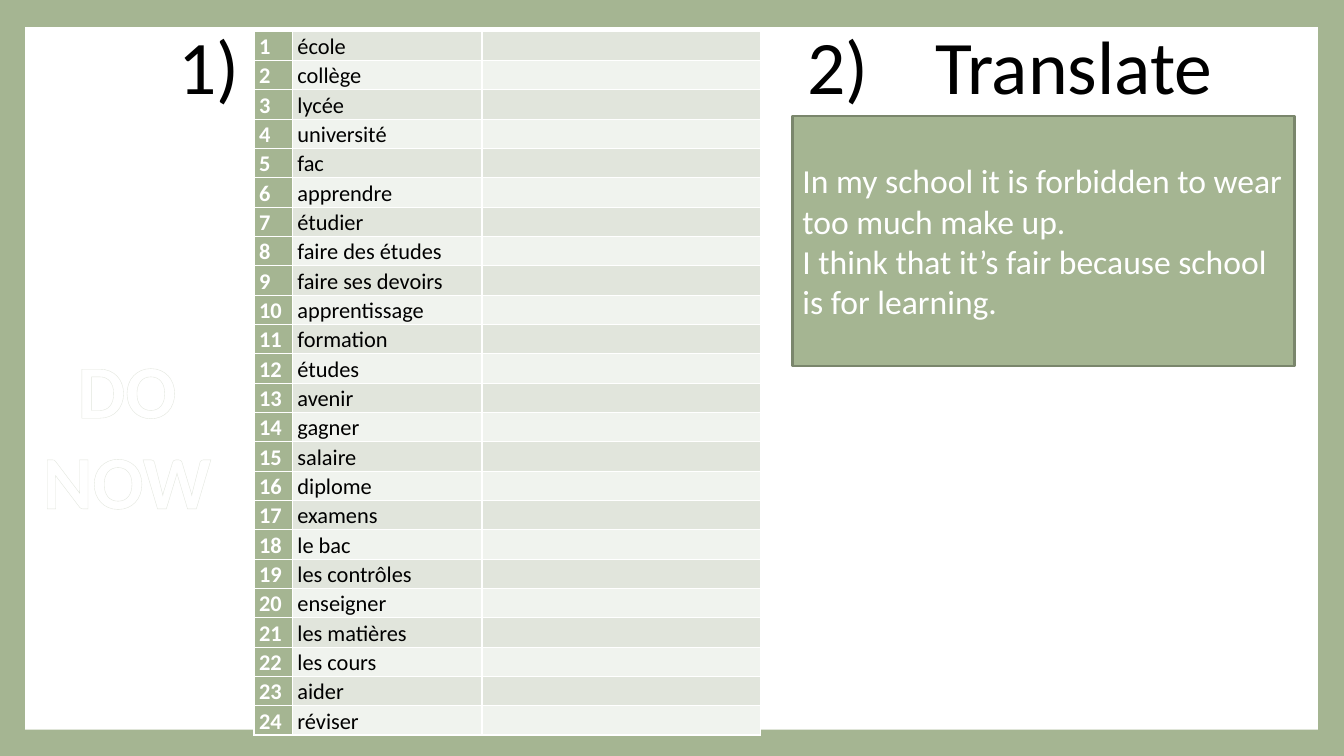
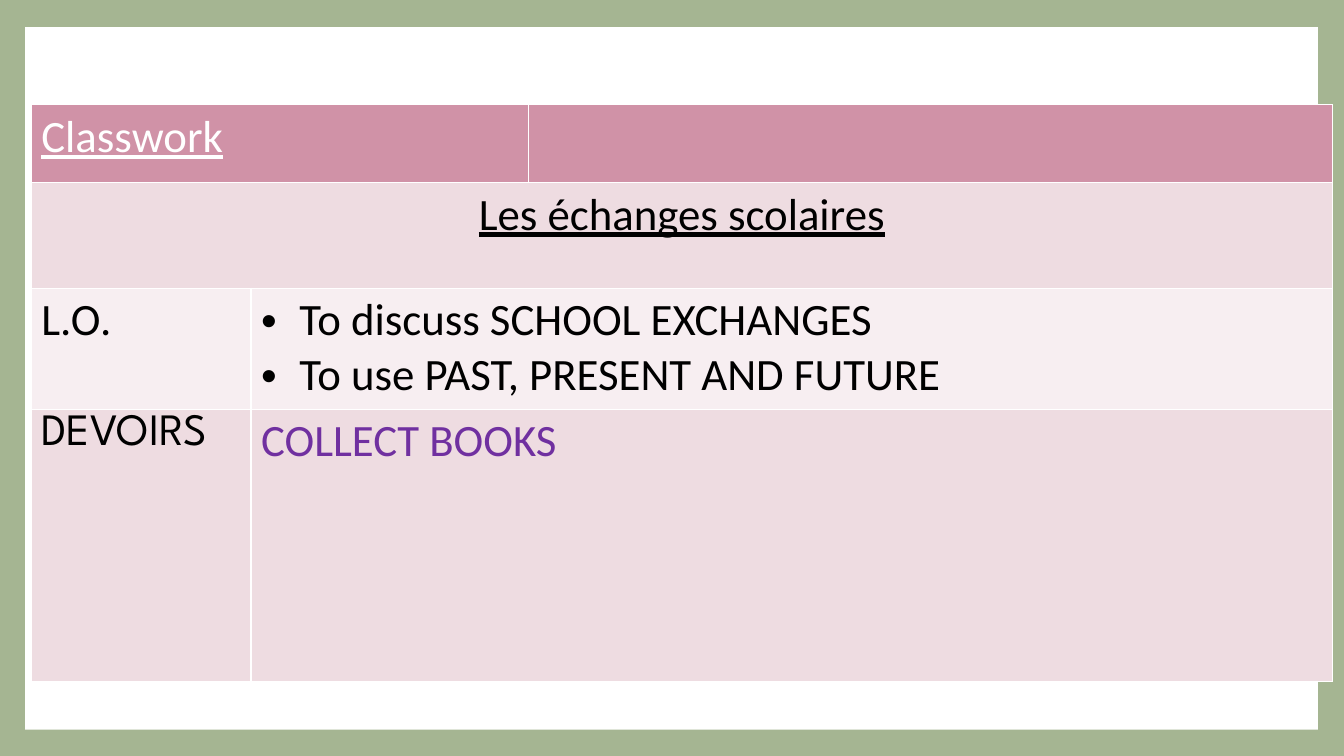
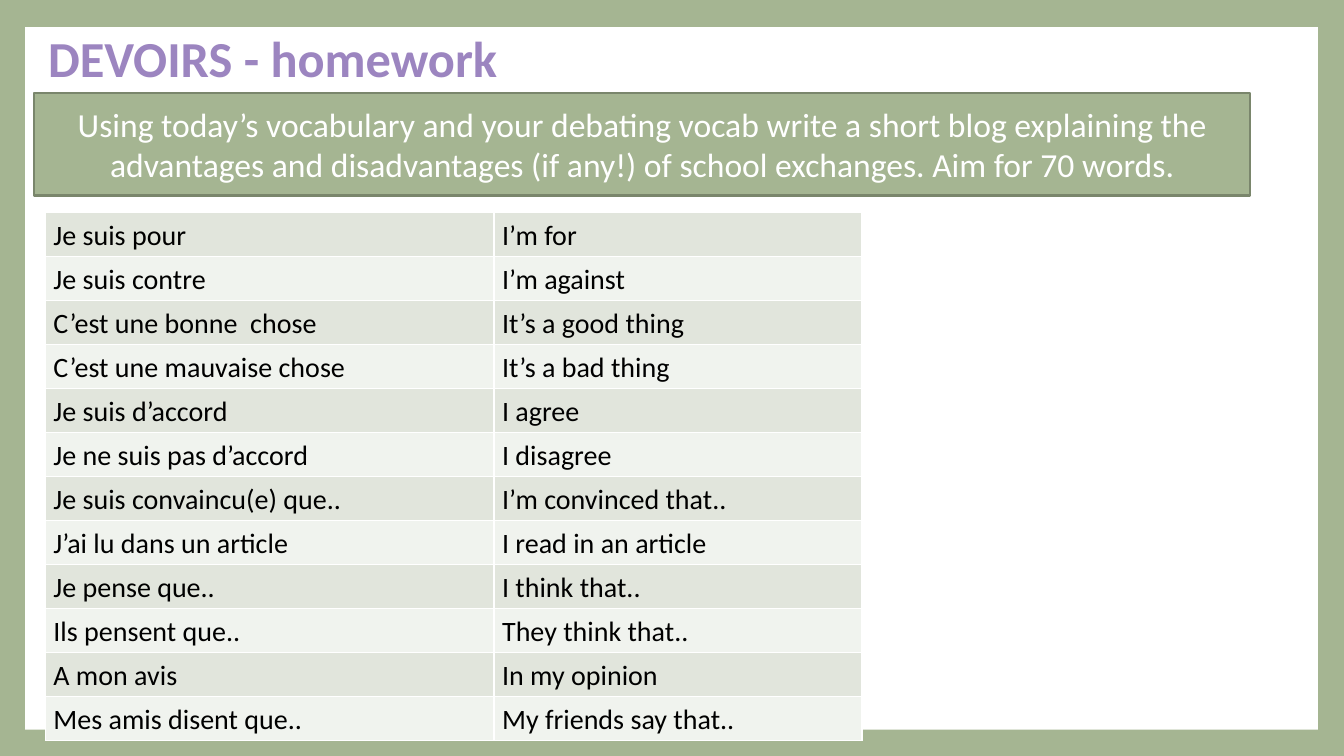
from lxml import etree
from pptx import Presentation
from pptx.dml.color import RGBColor
from pptx.enum.shapes import MSO_SHAPE
from pptx.enum.text import MSO_ANCHOR, MSO_AUTO_SIZE, PP_ALIGN
from pptx.oxml.ns import qn
from pptx.util import Inches, Pt

RECT = MSO_SHAPE.RECTANGLE
MIDDLE = MSO_ANCHOR.MIDDLE
GROW = MSO_AUTO_SIZE.SHAPE_TO_FIT_TEXT
LEFT, CENTER = PP_ALIGN.LEFT, PP_ALIGN.CENTER

HUES = {
    "sage": "A5B592", "moss": "7A866C", "mist": "E1E5DC", "pale": "F0F3EE",
    "rose": "D092A7", "blush": "EEDCE1", "petal": "F7EEF1",
    "violet": "7030A0", "lilac": "9C85C0", "white": "FFFFFF", "black": "000000",
}
BANDS = ("mist", "pale")

# Text formats
BASE = {"name": "Calibri", "size": Pt(16), "bold": False}
HEAD = BASE | {"size": Pt(54)}
BOLD = BASE | {"bold": True}
BODY = BASE | {"size": Pt(24)}
LARGE = BASE | {"size": Pt(32)}
LINED = LARGE | {"underline": True}
PHRASE = BASE | {"size": Pt(20)}

WORDS = [
    "école", "collège", "lycée", "université", "fac", "apprendre", "étudier",
    "faire des études", "faire ses devoirs", "apprentissage", "formation",
    "études", "avenir", "gagner", "salaire", "diplome", "examens", "le bac",
    "les contrôles", "enseigner", "les matières", "les cours", "aider", "réviser",
]
PAIRS = [
    ("Je suis pour", "I’m for"),
    ("Je suis contre", "I’m against"),
    ("C’est une bonne  chose", "It’s a good thing"),
    ("C’est une mauvaise chose", "It’s a bad thing"),
    ("Je suis d’accord", "I agree"),
    ("Je ne suis pas d’accord", "I disagree"),
    ("Je suis convaincu(e) que..", "I’m convinced that.."),
    ("J’ai lu dans un article", "I read in an article"),
    ("Je pense que..", "I think that.."),
    ("Ils pensent que..", "They think that.."),
    ("A mon avis", "In my opinion"),
    ("Mes amis disent que..", "My friends say that.."),
]


def hue(name):
    return RGBColor.from_string(HUES[name])


def inches(box):
    return [Inches(v) for v in box]


def apply(item, values):
    for key, value in values.items():
        setattr(item, key, value)


def solid(parent, name):
    fill = etree.SubElement(parent, qn("a:solidFill"))
    etree.SubElement(fill, qn("a:srgbClr"), val=HUES[name])


def write(frame, lines, font, color, para=None, bullet=False):
    """Fill a text frame, one paragraph a line."""
    for i, line in enumerate(lines):
        par = frame.paragraphs[0] if i == 0 else frame.add_paragraph()
        apply(par, para or {})
        if not line:  # keeps an empty cell from growing
            par._p.get_or_add_endParaRPr().set("sz", str(int(font["size"].pt * 100)))
            continue
        run = par.add_run()
        run.text = line
        apply(run.font, font)
        run.font.color.rgb = hue(color)
        if bullet:
            props = par._p.get_or_add_pPr()
            props.set("marL", str(Inches(0.38)))
            props.set("indent", str(-Inches(0.38)))
            etree.SubElement(props, qn("a:buFont"), typeface="Arial")
            etree.SubElement(props, qn("a:buChar"), char="•")


def label(slide, box, lines, font, color, edge=None):
    """Centred text that does not wrap, with an optional outline."""
    frame = slide.shapes.add_textbox(*inches(box)).text_frame
    apply(frame, {"word_wrap": False, "auto_size": GROW})
    write(frame, lines, font, color, {"alignment": CENTER})
    if edge:
        for par in frame.paragraphs:
            for run in par.runs:
                line = etree.Element(qn("a:ln"), w=str(Pt(0.75)))
                solid(line, edge)
                run.font._element.insert(0, line)


def block(slide, box, color, edge=None):
    shape = slide.shapes.add_shape(RECT, *inches(box))
    shape.shadow.inherit = False
    shape.fill.solid()
    shape.fill.fore_color.rgb = hue(color)
    if edge:
        shape.line.color.rgb = hue(edge)
        shape.line.width = Pt(1.5)
    else:
        shape.line.fill.background()
    return shape


def panel(slide, box, lines, align):
    """Green box holding a task."""
    frame = block(slide, box, "sage", "moss").text_frame
    apply(frame, {"word_wrap": True, "vertical_anchor": MIDDLE})
    write(frame, lines, BODY, "white", {"alignment": align})


def grid(slide, left, top, cols, rows):
    """Table with the given column widths and row heights."""
    box = inches((left, top, sum(cols), sum(rows)))
    table = slide.shapes.add_table(len(rows), len(cols), *box).table
    for col, width in zip(table.columns, cols):
        col.width = Inches(width)
    for row, height in zip(table.rows, rows):
        row.height = Inches(height)
    return table


def dress(cell, color, side, end):
    """Fill, white borders and margins of a cell."""
    apply(cell, {"margin_left": Inches(side), "margin_right": Inches(side),
                 "margin_top": Inches(end), "margin_bottom": Inches(end)})
    props = cell._tc.get_or_add_tcPr()
    for tag in ("a:lnL", "a:lnR", "a:lnT", "a:lnB"):
        solid(etree.SubElement(props, qn(tag), w=str(Pt(1))), "white")
    cell.fill.solid()
    cell.fill.fore_color.rgb = hue(color)


def start(deck):
    """New slide with the green frame round a white page."""
    slide = deck.slides.add_slide(deck.slide_layouts[6])
    slide.background.fill.solid()
    slide.background.fill.fore_color.rgb = hue("sage")
    block(slide, (0.25, 0.27, 12.82, 6.97), "white")
    return slide


def vocab(slide, left, top):
    """Numbered word list with room for answers."""
    table = grid(slide, left, top, (0.38, 1.88, 2.76), [0.285] * len(WORDS))
    for i, word in enumerate(WORDS):
        band = BANDS[i % 2]
        parts = ((str(i + 1), BOLD, "white", "sage"),
                 (word, BASE, "black", band), ("", BASE, "black", band))
        for j, (text, font, color, back) in enumerate(parts):
            cell = table.cell(i, j)
            dress(cell, back, 0.05, 0)
            write(cell.text_frame, [text], font, color, {"line_spacing": 1.07})


def phrases(slide, left, top):
    """French and English phrases side by side."""
    table = grid(slide, left, top, (4.45, 3.65), [0.416] * len(PAIRS))
    para = {"line_spacing": 1.07, "space_after": Pt(8)}
    for i, pair in enumerate(PAIRS):
        for j, text in enumerate(pair):
            cell = table.cell(i, j)
            dress(cell, BANDS[i % 2], 0.08, 0.04)
            write(cell.text_frame, [text], PHRASE, "black", para)


def lesson(slide, left, top):
    """Lesson plan: heading, title, aims and homework."""
    table = grid(slide, left, top, (2.18, 2.75, 7.98), (0.77, 1.05, 1.2, 2.7))
    for i, back in enumerate(("rose", "blush", "petal", "blush")):
        for j in range(3):
            dress(table.cell(i, j), back, 0.1, 0.05)
    for i, first, last in ((0, 0, 1), (1, 0, 2), (2, 1, 2), (3, 1, 2)):
        table.cell(i, first).merge(table.cell(i, last))
    aims = ["To discuss SCHOOL EXCHANGES", "To use PAST, PRESENT AND FUTURE"]
    spartan = LARGE | {"name": "League Spartan"}
    parts = (
        (0, 0, ["Classwork"], LINED, "white", LEFT),
        (1, 0, ["Les échanges scolaires"], LINED, "black", CENTER),
        (2, 0, ["L.O."], LARGE, "black", LEFT),
        (2, 1, aims, LARGE, "black", LEFT),
        (3, 0, ["DEVOIRS"], spartan, "black", LEFT),
        (3, 1, ["COLLECT BOOKS"], LARGE, "violet", LEFT),
    )
    for i, j, lines, font, color, align in parts:
        write(table.cell(i, j).text_frame, lines, font, color,
              {"alignment": align}, bullet=lines is aims)


def main():
    deck = Presentation()
    deck.slide_width, deck.slide_height = Inches(13.33), Inches(7.5)

    # Starter tasks
    slide = start(deck)
    vocab(slide, 2.52, 0.31)
    for text, left, width in (("1)", 1.62, 0.9), ("2)", 7.86, 0.9),
                              ("Translate", 8.93, 3.44)):
        label(slide, (left, 0.14, width, 1.01), [text], HEAD, "black")
    panel(slide, (7.86, 1.15, 4.98, 2.48),
          ["In my school it is forbidden to wear too much make up.",
           "I think that it’s fair because school is for learning."], LEFT)
    label(slide, (0.31, 3.35, 1.9, 1.93), ["DO", "NOW"],
          HEAD | {"bold": True}, "white", "mist")

    # Lesson plan
    lesson(start(deck), 0.31, 1.04)

    # Homework
    slide = start(deck)
    label(slide, (0.21, 0.22, 4.99, 0.71), ["DEVOIRS - homework"],
          BOLD | {"size": Pt(36)}, "lilac", "white")
    panel(slide, (0.34, 0.92, 12.06, 1.02),
          ["Using today’s vocabulary and your debating vocab write a short blog "
           "explaining the advantages and disadvantages (if any!) of school "
           "exchanges. Aim for 70 words."], CENTER)
    phrases(slide, 0.45, 2.11)

    deck.save("out.pptx")


if __name__ == "__main__":
    main()
